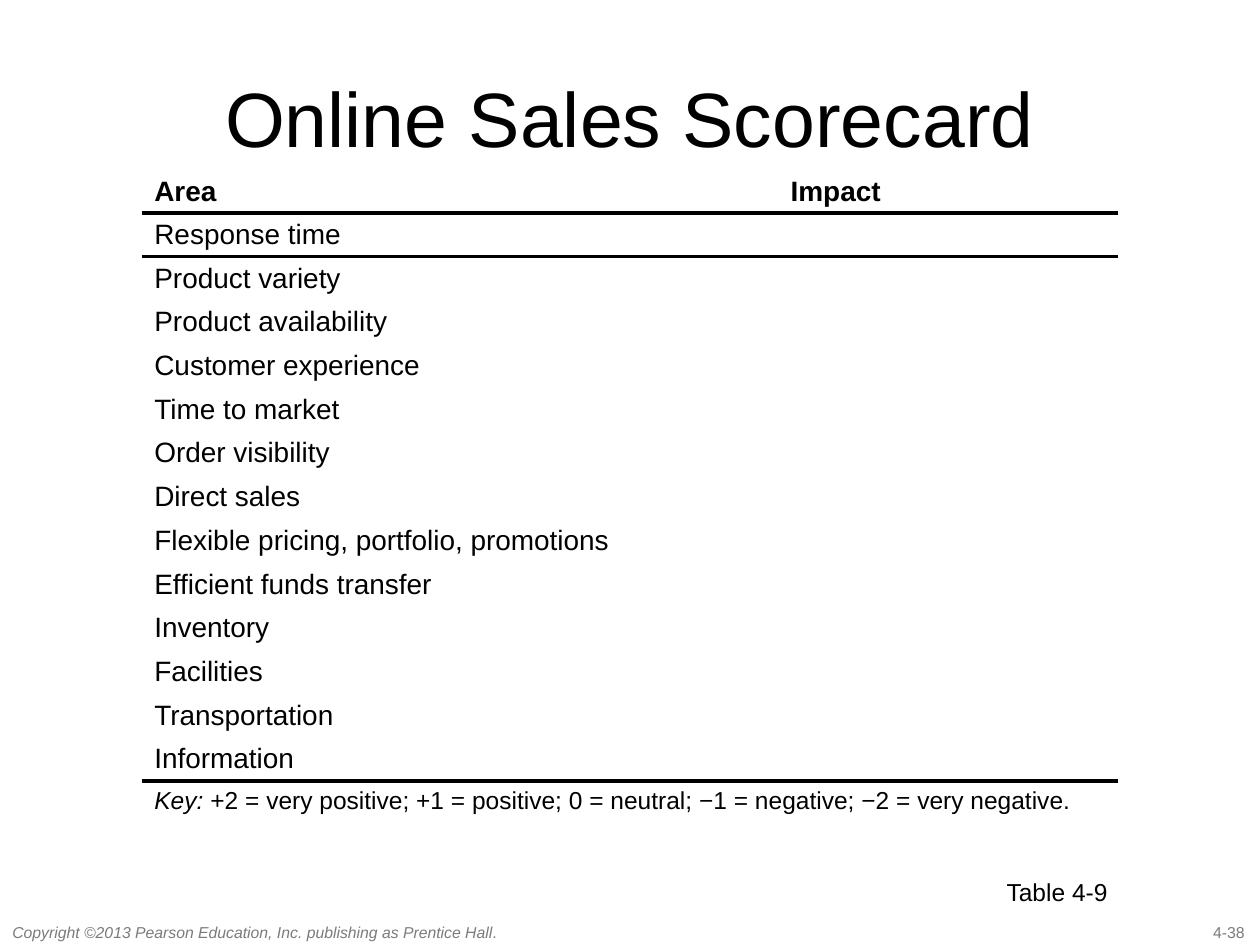
from lxml import etree
from pptx import Presentation
from pptx.dml.color import RGBColor
from pptx.enum import text as t
from pptx.oxml import ns
from pptx.util import Pt

BLACK = RGBColor(0, 0, 0)
GRAY = RGBColor(0x7B, 0x7B, 0x7B)
FONT = "Arial"
PLAIN = "{2D5ABB26-0587-4C30-8999-92F81FD0307C}"  # no style, no grid

AREAS = [
    "Response time", "Product variety", "Product availability",
    "Customer experience", "Time to market", "Order visibility",
    "Direct sales", "Flexible pricing, portfolio, promotions",
    "Efficient funds transfer", "Inventory", "Facilities",
    "Transportation", "Information",
]
KEY = ("+2 = very positive; +1 = positive; 0 = neutral; "
       "−1 = negative; −2 = very negative.")


class Page:
    def __init__(self, slide):
        self.slide = slide

    def style(self, para, size, color=BLACK, bold=False):
        font = para.font
        font.name, font.size, font.bold = FONT, Pt(size), bold
        font.color.rgb = color

    def fill(self, para, runs):
        """Add (words, italic) runs to a paragraph."""
        for words, slant in runs:
            run = para.add_run()
            run.text = words
            if slant:
                run.font.italic = True

    def label(self, runs, box, size, color=BLACK, wrap=False, align=None):
        frame = self.slide.shapes.add_textbox(*map(Pt, box)).text_frame
        frame.word_wrap = wrap
        if wrap:
            frame.vertical_anchor = t.MSO_ANCHOR.MIDDLE
        else:
            frame.auto_size = t.MSO_AUTO_SIZE.SHAPE_TO_FIT_TEXT
        para = frame.paragraphs[0]
        if align is not None:
            para.alignment = align
        self.fill(para, runs)
        self.style(para, size, color)

    def cell(self, cell, runs, size, bold=False):
        cell.margin_top = cell.margin_bottom = Pt(2.5)
        cell.vertical_anchor = t.MSO_ANCHOR.MIDDLE
        cell.fill.background()
        para = cell.text_frame.paragraphs[0]
        self.fill(para, runs)
        self.style(para, size, bold=bold)
        if not runs:  # an empty cell keeps the row's font and size
            end = etree.SubElement(para._p, ns.qn("a:endParaRPr"))
            end.set("sz", str(size * 100))
            etree.SubElement(end, ns.qn("a:latin"), typeface=FONT)

    def edge(self, cell, side):
        """Draw a black rule on one side (T or B) of a cell."""
        props = cell._tc.get_or_add_tcPr()
        line = etree.Element(ns.qn("a:ln" + side), w=str(Pt(2.25)))
        solid = etree.SubElement(line, ns.qn("a:solidFill"))
        etree.SubElement(solid, ns.qn("a:srgbClr"), val=str(BLACK))
        props.insert(0, line)

    def table(self, rows, spot, cols, highs, rules):
        """rows: (cells, size, bold); rules: rows with a line below."""
        frame = self.slide.shapes.add_table(
            len(rows), len(cols), *map(Pt, spot), Pt(sum(cols)), Pt(sum(highs)))
        grid = frame.table
        grid.first_row = grid.horz_banding = False
        grid._tbl.tblPr.find(ns.qn("a:tableStyleId")).text = PLAIN
        for col, wide in zip(grid.columns, cols):
            col.width = Pt(wide)
        for row, high, (cells, size, bold) in zip(grid.rows, highs, rows):
            row.height = Pt(high)
            for cell, runs in zip(row.cells, cells):
                self.cell(cell, runs, size, bold)
        for row in rules:
            for col in range(len(cols)):
                self.edge(grid.cell(row, col), "B")
                self.edge(grid.cell(row + 1, col), "T")
        return grid


def main():
    deck = Presentation()
    deck.slide_width, deck.slide_height = Pt(720), Pt(540)
    page = Page(deck.slides.add_slide(deck.slide_layouts[6]))

    # Footer
    page.label([("4-38", False)], (686.2, 523.8, 33.8, 18), 9, GRAY)
    page.label([("Copyright ©2013 Pearson Education, Inc. publishing as "
                 "Prentice Hall", True), (".", False)],
               (0, 523.8, 293, 18), 9, GRAY)

    # Title
    page.label([("Online Sales Scorecard", False)], (36, 21.6, 648, 90), 44,
               wrap=True, align=t.PP_ALIGN.CENTER)

    # Scorecard
    rows = [([[("Area", False)], [("Impact", False)]], 16, True)]
    rows += [([[(area, False)], []], 16, False) for area in AREAS]
    rows += [([[("Key: ", True), (KEY, False)], []], 14, False)]
    highs = [24.5] + [25] * len(AREAS) + [23]
    grid = page.table(rows, (81, 97.2), (363.6, 194.4), highs,
                      rules=(0, len(AREAS)))
    last = len(rows) - 1
    grid.cell(last, 0).merge(grid.cell(last, 1))

    # Caption
    page.label([("Table 4-9", False)], (568.1, 497.5, 72.7, 24.5), 14)

    deck.save("out.pptx")


if __name__ == "__main__":
    main()
